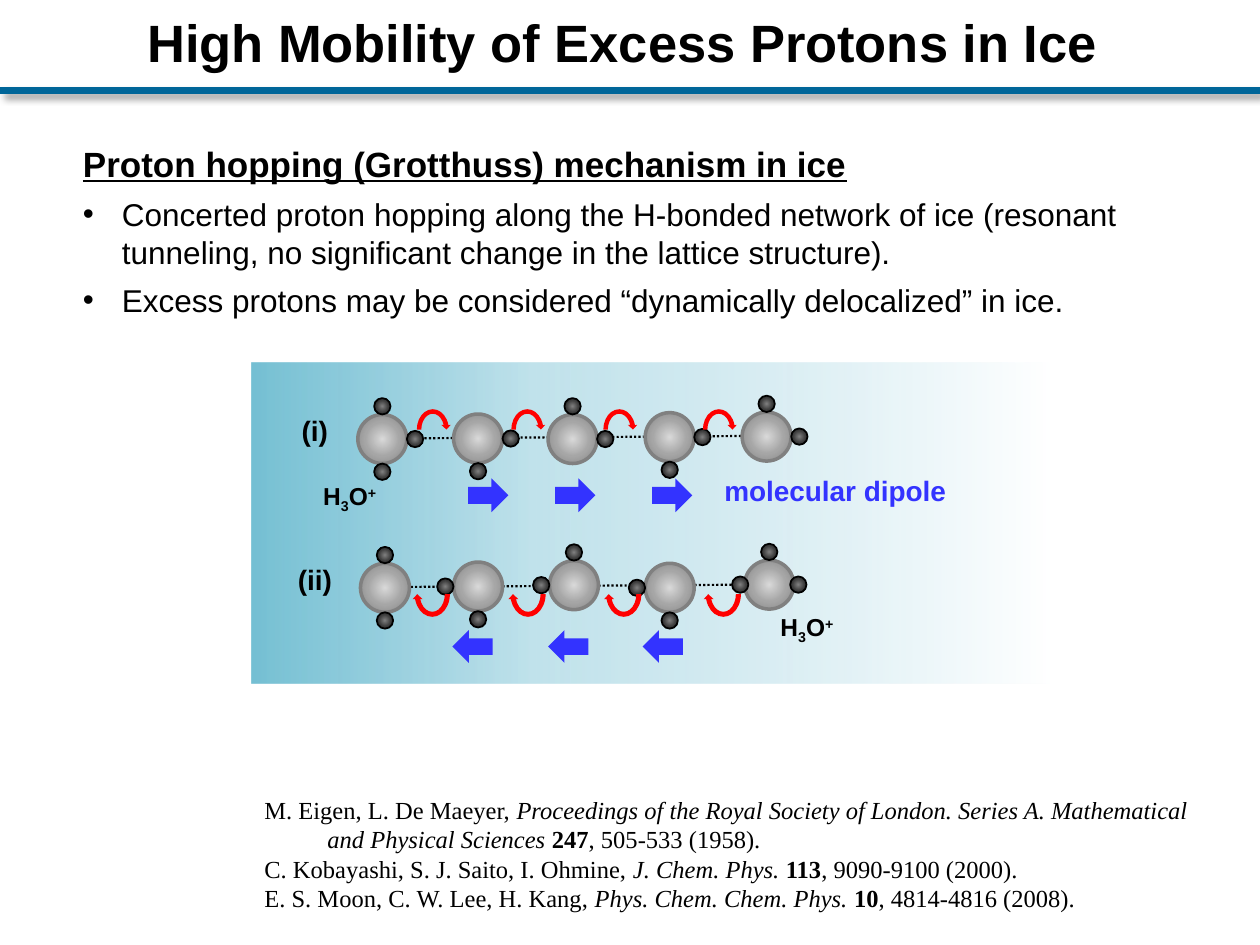
from lxml import etree
from pptx import Presentation
from pptx.dml.color import RGBColor
from pptx.enum.dml import MSO_LINE
from pptx.enum.shapes import MSO_CONNECTOR, MSO_SHAPE
from pptx.enum.text import MSO_ANCHOR, MSO_AUTO_SIZE, PP_ALIGN
from pptx.oxml import parse_xml
from pptx.oxml.ns import nsdecls, qn
from pptx.util import Pt

STRAIGHT = MSO_CONNECTOR.STRAIGHT
RECT, OVAL = MSO_SHAPE.RECTANGLE, MSO_SHAPE.OVAL
DIPOLE, HOP = MSO_SHAPE.DOWN_ARROW, MSO_SHAPE.CIRCULAR_ARROW
CENTER, MIDDLE = PP_ALIGN.CENTER, MSO_ANCHOR.MIDDLE
GROW = MSO_AUTO_SIZE.SHAPE_TO_FIT_TEXT
DOTTED = MSO_LINE.ROUND_DOT

COLORS = {"text": "000000", "rule": "006699", "dipole": "3333FF", "hop": "FF0000",
          "oxygen_edge": "808080", "hydrogen_edge": "000000"}
# Gradient stops: position %, colour, opacity %
PANEL = [(0, "4BACC6", 76), (35, "B3DCE7", 82), (100, "FFFFFF", 100)]
OXYGEN = [(0, "D9D9D9", 100), (50, "A6A6A6", 100), (100, "808080", 100)]
HYDROGEN = [(0, "808080", 100), (50, "404040", 100), (100, "000000", 100)]
DOWNWARD = '<a:lin ang="5400000" scaled="0"/>'
RADIAL = ('<a:path path="circle"><a:fillToRect l="50000" t="50000" '
          'r="50000" b="50000"/></a:path>')

OXYGEN_SIZE, HYDROGEN_SIZE, BOND = 28, 9.36, 18.7
DIRECTIONS = {"up": (0, -1), "down": (0, 1), "left": (-1, 0), "right": (1, 0)}
HYDRONIUM = [("H", {}), ("3", {"baseline": -25}), ("O", {}), ("+", {"baseline": 30})]


def rgb(name):
    return RGBColor.from_string(COLORS[name])


class SlideBuilder:
    def __init__(self, slide, font="Arial"):
        self.slide = slide
        self.font = font

    def text(self, box, paragraphs, size, color="text", font=None, bold=False,
             align=None, anchor=None, spacing=None, before=0, hanging=0):
        """Each paragraph is a list of (text, options) runs."""
        frame = self.slide.shapes.add_textbox(*map(Pt, box)).text_frame
        frame.word_wrap = True
        frame.auto_size = MSO_AUTO_SIZE.NONE if anchor else GROW
        frame.vertical_anchor = anchor
        for index, runs in enumerate(paragraphs):
            paragraph = frame.paragraphs[0] if index == 0 else frame.add_paragraph()
            paragraph.alignment = align
            paragraph.line_spacing = spacing
            if index:
                paragraph.space_before = Pt(before)
            if hanging:
                self.indent(paragraph, hanging)
            for words, options in runs:
                run = paragraph.add_run()
                run.text = words
                run.font.name = font or self.font
                run.font.size = Pt(options.get("size", size))
                run.font.bold = options.get("bold", bold)
                run.font.italic = options.get("italic", False)
                run.font.underline = options.get("underline", False)
                run.font.color.rgb = rgb(color)
                if "baseline" in options:
                    run.font._element.set("baseline", str(options["baseline"] * 1000))
        return frame

    def indent(self, paragraph, hanging):
        properties = paragraph._p.get_or_add_pPr()
        properties.set("marL", str(Pt(hanging)))
        properties.set("indent", str(-Pt(hanging)))
        return properties

    def bullet(self, paragraph, hanging):
        properties = self.indent(paragraph, hanging)
        etree.SubElement(properties, qn("a:buFont")).set("typeface", self.font)
        etree.SubElement(properties, qn("a:buChar")).set("char", "•")

    def line(self, start, end, color, width, dash=None, shadow=False):
        connector = self.slide.shapes.add_connector(STRAIGHT, *map(Pt, start + end))
        connector.line.color.rgb = rgb(color)
        connector.line.width = Pt(width)
        if dash:
            connector.line.dash_style = dash
        effects = etree.SubElement(connector._element.spPr, qn("a:effectLst"))
        if shadow:
            effects.append(parse_xml(
                f'<a:outerShdw {nsdecls("a")} blurRad="{Pt(4)}" dist="{Pt(3)}" '
                'dir="2700000" rotWithShape="0"><a:srgbClr val="000000">'
                '<a:alpha val="40000"/></a:srgbClr></a:outerShdw>'))

    def shape(self, kind, center, size, fill, rotation=0, edge=None, edge_width=1,
              gradient=RADIAL):
        """fill is a colour name or a list of gradient stops."""
        (x, y), (width, height) = center, size
        shape = self.slide.shapes.add_shape(
            kind, Pt(x - width / 2), Pt(y - height / 2), Pt(width), Pt(height))
        shape.rotation = rotation
        shape.shadow.inherit = False
        if isinstance(fill, str):
            shape.fill.solid()
            shape.fill.fore_color.rgb = rgb(fill)
        else:
            stops = "".join(
                f'<a:gs pos="{position * 1000}"><a:srgbClr val="{color}">'
                f'<a:alpha val="{opacity * 1000}"/></a:srgbClr></a:gs>'
                for position, color, opacity in fill)
            shape._element.spPr.find(qn("a:prstGeom")).addnext(parse_xml(
                f'<a:gradFill {nsdecls("a")} rotWithShape="1">'
                f'<a:gsLst>{stops}</a:gsLst>{gradient}</a:gradFill>'))
        if edge:
            shape.line.color.rgb = rgb(edge)
            shape.line.width = Pt(edge_width)
        else:
            shape.line.fill.background()

    def molecule(self, center, hydrogens, bond=BOND):
        """bond is the sideways distance from oxygen to hydrogen."""
        x, y = center
        self.shape(OVAL, center, (OXYGEN_SIZE,) * 2, OXYGEN,
                   edge="oxygen_edge", edge_width=2)
        for direction in hydrogens.split():
            dx, dy = DIRECTIONS[direction]
            self.shape(OVAL, (x + dx * bond, y + dy * BOND), (HYDROGEN_SIZE,) * 2,
                       HYDROGEN, edge="hydrogen_edge")

    def arrows(self, kind, centers_x, y, size, color, rotation):
        for x in centers_x:
            self.shape(kind, (x, y), size, color, rotation)

    def label(self, box, runs, size):
        self.text(box, [runs], size, bold=True, align=CENTER)


def citation(authors, journal, volume, pages):
    return [(authors, {}), (journal, {"italic": True}),
            (volume, {"bold": True}), (pages, {})]


def main():
    presentation = Presentation()
    presentation.slide_width, presentation.slide_height = Pt(720), Pt(540)
    page = SlideBuilder(presentation.slides.add_slide(presentation.slide_layouts[6]))

    page.text((0, 0, 720, 51.8), [[("High Mobility of Excess Protons in Ice ", {})]],
              30, bold=True, align=CENTER, anchor=MIDDLE, spacing=0.9)
    page.line((0, 52), (720, 52), "rule", 4, shadow=True)

    mechanism = page.text((40.3, 77.8, 666, 108.7), [
        [("Proton hopping (Grotthuss) mechanism in ice",
          {"size": 20, "bold": True, "underline": True})],
        [("Concerted proton hopping along the H-bonded network of ice (resonant "
          "tunneling, no significant change in the lattice structure).", {})],
        [("Excess protons may be considered “dynamically delocalized” in ice.", {})],
    ], 18, before=6)
    for point in mechanism.paragraphs[1:]:
        page.bullet(point, 22.3)

    page.text((144, 450.7, 562.3, 74.9), [
        citation("M. Eigen, L. De Maeyer, ",
                 "Proceedings of the Royal Society of London. Series A. "
                 "Mathematical and Physical Sciences ", "247", ", 505-533 (1958)."),
        citation("C. Kobayashi, S. J. Saito, I. Ohmine, ", "J. Chem. Phys. ",
                 "113", ", 9090-9100 (2000)."),
        citation("E. S. Moon, C. W. Lee, H. Kang, ", "Phys. Chem. Chem. Phys. ",
                 "10", ", 4814-4816 (2008)."),
    ], 14, font="Times New Roman", hanging=36)

    page.shape(RECT, (372.6, 298.8), (183.6, 457.9), PANEL, 270, gradient=DOWNWARD)

    # Chain (i): the excess proton sits at the left end
    page.line((433.4, 249.1), (221, 250.6), "text", 1.25, DOTTED)
    for center, hydrogens in [((218.5, 250.9), "up right down"),
                              ((273.2, 250.6), "down right"),
                              ((327.2, 250.9), "right up"),
                              ((382.7, 249.8), "down right"),
                              ((438.1, 249.5), "right up")]:
        page.molecule(center, hydrogens)
    page.arrows(HOP, (247.3, 301.3, 353.9, 410.8), 245.5, (20.9, 25.9), "hop", 0)
    page.arrows(DIPOLE, (279, 328.7, 384.1), 283, (19.4, 23), "dipole", 270)
    page.label((159.8, 232.6, 40.3, 31), [("(i)", {})], 16)
    page.label((167.8, 271.4, 64.1, 28.1), HYDRONIUM, 14)

    # Chain (ii): the excess proton has moved to the right end
    page.line((425.5, 334.1), (219.6, 335.5), "text", 1.25, DOTTED)
    for center, hydrogens, bond in [((220, 335.9), "up down", BOND),
                                    ((273.2, 335.2), "left down", BOND),
                                    ((328, 334.4), "up left", BOND),
                                    ((382.7, 335.9), "left down", BOND),
                                    ((439.6, 334.1), "up right left", 16.6)]:
        page.molecule(center, hydrogens, bond)
    page.arrows(HOP, (247, 301.7, 356.4, 413.3), 339.5, (23, 28.8), "hop", 180)
    page.arrows(DIPOLE, (270, 324.7, 378.7), 369.5, (18.7, 23), "dipole", 90)
    page.label((159.8, 318.2, 40.3, 31), [("(ii)", {})], 16)
    page.label((433.4, 346.3, 55.4, 28.1), HYDRONIUM, 14)

    page.text((406.8, 267.1, 195.1, 31), [[("molecular dipole", {})]], 16,
              color="dipole", bold=True)

    presentation.save("out.pptx")


if __name__ == "__main__":
    main()
